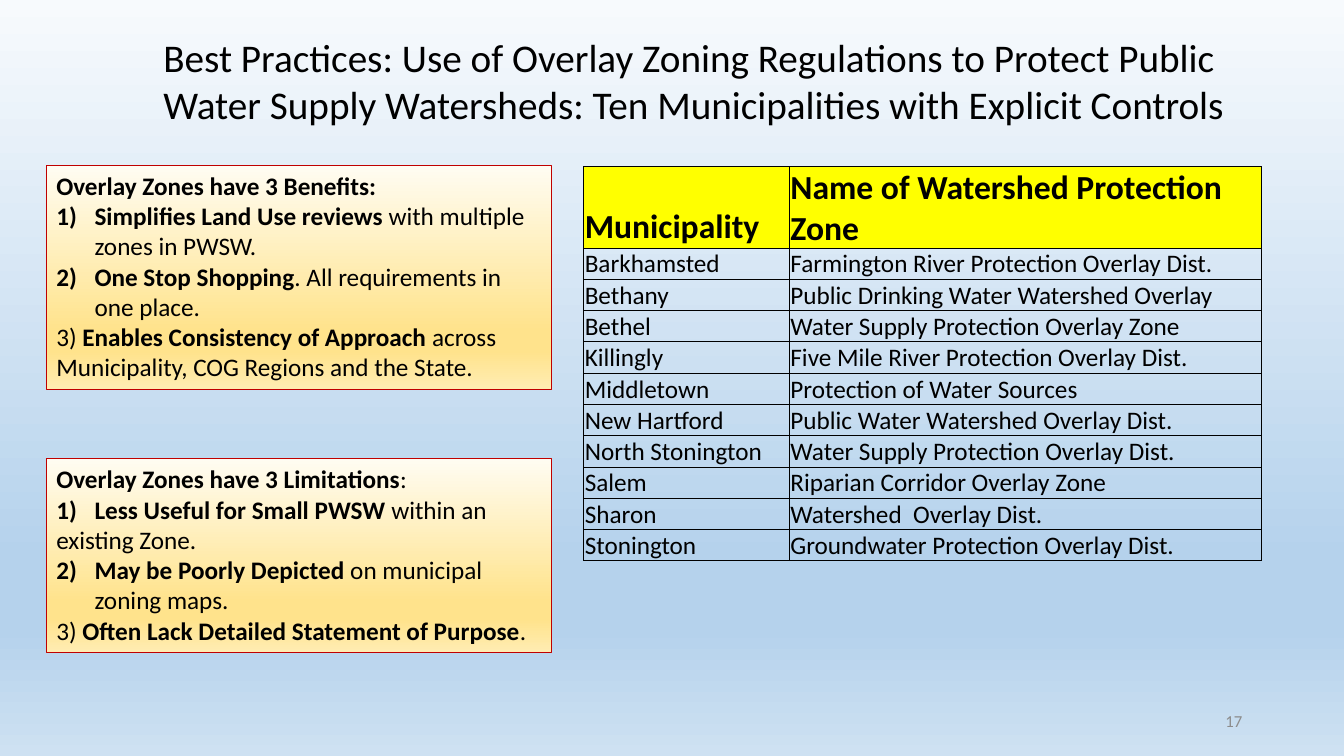
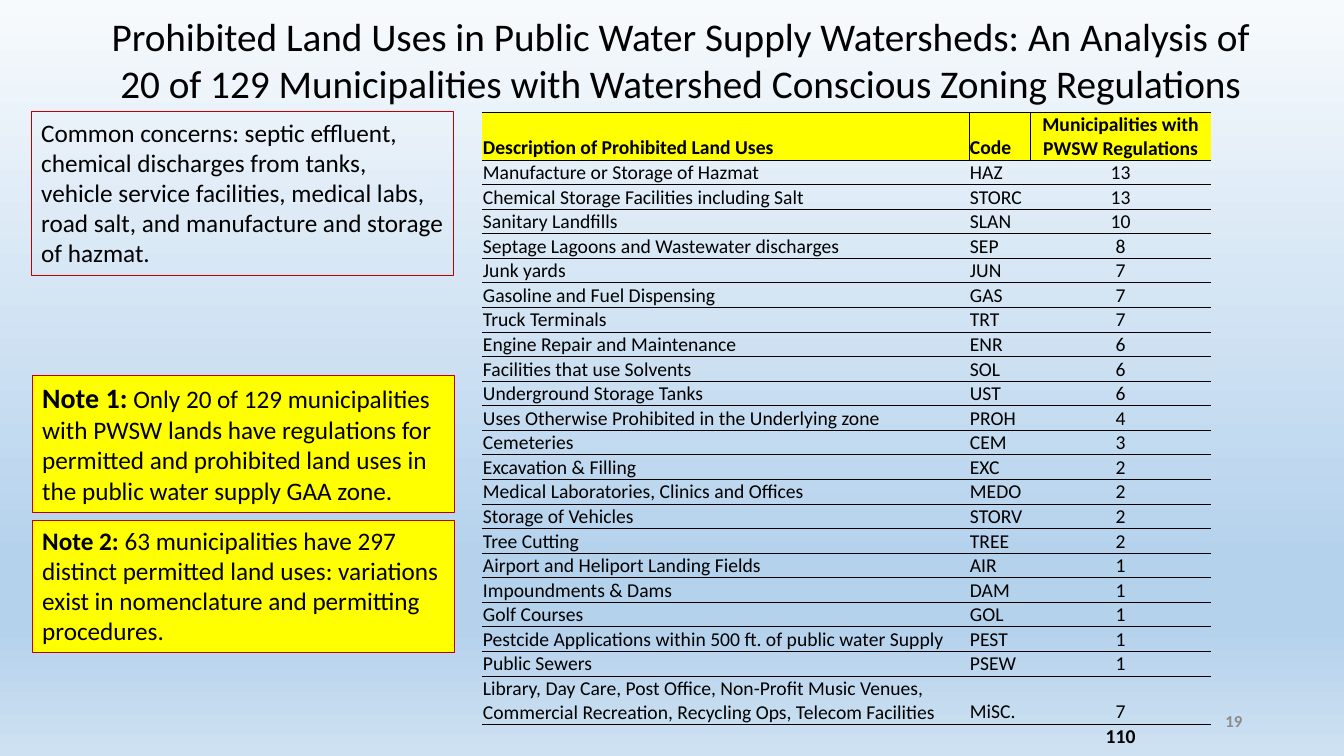
from lxml import etree
from pptx import Presentation
from pptx import util as u
from pptx.dml.color import RGBColor
from pptx.enum import shapes, text
from pptx.oxml.ns import qn

FONT = "Calibri"
BLACK, GREY, RED, YELLOW = "000000", "8C8C8C", "C00000", "FFFF00"
SKY = [(0, "F7FAFD"), (74, "B5D2EC"), (83, "B5D2EC"), (100, "CEE1F2")]
SAND = [(0, "FFFCF2"), (74, "FFE38C"), (83, "FFE38C"), (100, "FFECB2")]
LEFT, CENTER, RIGHT = text.PP_ALIGN.LEFT, text.PP_ALIGN.CENTER, text.PP_ALIGN.RIGHT


def rgb(value):
    return RGBColor.from_string(value)


def add_color(parent, value):
    etree.SubElement(parent, qn("a:srgbClr")).set("val", value)


def set_gradient(fill, element, stops):
    """Fill top to bottom with (percent, colour) stops."""
    fill.gradient()
    fill.gradient_angle = 270
    stop_list = next(element.iter(qn("a:gsLst")))
    for old in list(stop_list):
        stop_list.remove(old)
    for percent, value in stops:
        stop = etree.SubElement(stop_list, qn("a:gs"))
        stop.set("pos", str(percent * 1000))
        add_color(stop, value)


def set_borders(cell, sides):
    """Draw the named sides of a cell and switch the others off."""
    tc_pr = cell._tc.get_or_add_tcPr()
    for i, side in enumerate("LRTB"):
        ln = etree.Element(qn("a:ln" + side))
        ln.set("w", str(u.Pt(0.5)))
        if side in sides:
            add_color(etree.SubElement(ln, qn("a:solidFill")), BLACK)
        else:
            etree.SubElement(ln, qn("a:noFill"))
        tc_pr.insert(i, ln)


def set_number(p, start):
    """Number a paragraph as start) with a hanging indent."""
    p_pr = p._p.get_or_add_pPr()
    p_pr.set("marL", str(u.Inches(0.38)))
    p_pr.set("indent", str(-u.Inches(0.38)))
    number = etree.SubElement(p_pr, qn("a:buAutoNum"))
    number.set("type", "arabicParenR")
    number.set("startAt", str(start))


class Deck:
    def __init__(self):
        self.prs = Presentation()
        self.prs.slide_width = u.Inches(13.33)
        self.prs.slide_height = u.Inches(7.5)
        master = self.prs.slide_master
        set_gradient(master.background.fill, master.element, SKY)
        self.s = None

    def font(self, r, size, bold=False, color=BLACK):
        r.font.name, r.font.size, r.font.bold = FONT, u.Pt(size), bold
        r.font.color.rgb = rgb(color)

    def plain(self, p, words, size, bold=False, color=BLACK, align=LEFT):
        p.text = words
        p.alignment = align
        for r in p.runs:
            self.font(r, size, bold, color)

    def slide(self, title, x, y, w, number, align=LEFT, bold_number=False):
        self.s = self.prs.slides.add_slide(self.prs.slide_layouts[5])
        sp = self.s.shapes.title
        sp.left, sp.top, sp.width, sp.height = map(u.Inches, (x, y, w, 1.04))
        tf = sp.text_frame
        tf.word_wrap = True
        tf.vertical_anchor = text.MSO_ANCHOR.TOP
        tf.auto_size = text.MSO_AUTO_SIZE.NONE
        self.plain(tf.paragraphs[0], title, 28, align=align)
        # Slide number
        sp = self.s.shapes.add_textbox(*map(u.Inches, (9.42, 6.95, 3, 0.4)))
        tf = sp.text_frame
        tf.word_wrap = True
        tf.vertical_anchor = text.MSO_ANCHOR.MIDDLE
        self.plain(tf.paragraphs[0], number, 12, bold_number, GREY, RIGHT)

    def box(self, x, y, w, h, paragraphs, fill=None, bold_size=18):
        """Paragraphs are (number or None, words); *words* are bold."""
        sp = self.s.shapes.add_shape(
            shapes.MSO_SHAPE.RECTANGLE, *map(u.Inches, (x, y, w, h)))
        sp.shadow.inherit = False
        sp.line.color.rgb = rgb(RED)
        sp.line.width = u.Pt(0.75)
        if fill is None:
            sp.fill.background()
        elif isinstance(fill, list):
            set_gradient(sp.fill, sp.element, fill)
        else:
            sp.fill.solid()
            sp.fill.fore_color.rgb = rgb(fill)
        tf = sp.text_frame
        tf.word_wrap = True
        tf.auto_size = text.MSO_AUTO_SIZE.SHAPE_TO_FIT_TEXT
        tf.vertical_anchor = text.MSO_ANCHOR.TOP
        for i, (number, words) in enumerate(paragraphs):
            p = tf.add_paragraph() if i else tf.paragraphs[0]
            p.alignment = LEFT
            if number:
                set_number(p, number)
            for j, part in enumerate(words.split("*")):
                if part:
                    r = p.add_run()
                    r.text = part
                    bold = j % 2 == 1
                    self.font(r, bold_size if bold else 18, bold)

    def table(self, x, y, widths, heights, rows, sizes, sides, aligns, total=False):
        """sizes are (header, body); sides(row, column) names the cell borders."""
        frame = self.s.shapes.add_table(
            len(rows), len(widths),
            *map(u.Inches, (x, y, sum(widths), heights[0] + heights[1] * (len(rows) - 1))))
        table = frame.table
        table.first_row = table.horz_banding = False
        for column, width in zip(table.columns, widths):
            column.width = u.Inches(width)
        for i, row in enumerate(rows):
            header = i == 0
            bold = header or (total and i == len(rows) - 1)
            size = sizes[0] if header else sizes[1]
            table.rows[i].height = u.Inches(heights[0] if header else heights[1])
            for j, words in enumerate(row):
                cell = table.cell(i, j)
                cell.margin_left = cell.margin_right = cell.margin_top = u.Inches(0.01)
                cell.margin_bottom = 0
                cell.vertical_anchor = text.MSO_ANCHOR.BOTTOM
                if header:
                    cell.fill.solid()
                    cell.fill.fore_color.rgb = rgb(YELLOW)
                else:
                    cell.fill.background()
                set_borders(cell, sides(i, j))
                p = cell.text_frame.paragraphs[0]
                self.plain(p, words, size, bold, align=aligns[j])
                if not words:  # an empty cell must not stretch its row
                    etree.SubElement(p._p, qn("a:endParaRPr")).set("sz", str(size * 100))


ZONES = [
    ("Municipality", "Name of Watershed Protection Zone"),
    ("Barkhamsted", "Farmington River Protection Overlay Dist."),
    ("Bethany", "Public Drinking Water Watershed Overlay"),
    ("Bethel", "Water Supply Protection Overlay Zone"),
    ("Killingly", "Five Mile River Protection Overlay Dist."),
    ("Middletown", "Protection of Water Sources"),
    ("New Hartford", "Public Water Watershed Overlay Dist."),
    ("North Stonington", "Water Supply Protection Overlay Dist."),
    ("Salem", "Riparian Corridor Overlay Zone"),
    ("Sharon", "Watershed  Overlay Dist."),
    ("Stonington", "Groundwater Protection Overlay Dist."),
]
LAND_USES = [
    ("Description of Prohibited Land Uses", "Code", "Municipalities with PWSW Regulations"),
    ("Manufacture or Storage of Hazmat", "HAZ", "13"),
    ("Chemical Storage Facilities including Salt", "STORC", "13"),
    ("Sanitary Landfills", "SLAN", "10"),
    ("Septage Lagoons and Wastewater discharges", "SEP", "8"),
    ("Junk yards", "JUN", "7"),
    ("Gasoline and Fuel Dispensing", "GAS", "7"),
    ("Truck Terminals", "TRT", "7"),
    ("Engine Repair and Maintenance", "ENR", "6"),
    ("Facilities that use Solvents", "SOL", "6"),
    ("Underground Storage Tanks", "UST", "6"),
    ("Uses Otherwise Prohibited in the Underlying zone", "PROH", "4"),
    ("Cemeteries", "CEM", "3"),
    ("Excavation & Filling", "EXC", "2"),
    ("Medical Laboratories, Clinics and Offices", "MEDO", "2"),
    ("Storage of Vehicles", "STORV", "2"),
    ("Tree Cutting", "TREE", "2"),
    ("Airport and Heliport Landing Fields", "AIR", "1"),
    ("Impoundments & Dams", "DAM", "1"),
    ("Golf Courses", "GOL", "1"),
    ("Pestcide Applications within 500 ft. of public water Supply", "PEST", "1"),
    ("Public Sewers", "PSEW", "1"),
    ("Library, Day Care, Post Office, Non-Profit Music Venues, Commercial Recreation, "
     "Recycling Ops, Telecom Facilities", "MiSC.", "7"),
    ("", "", "110"),
]


def land_use_sides(i, j):
    if i == 0:
        return ("RTB", "LRTB", "LTB")[j]
    return "T" if i == len(LAND_USES) - 1 else "TB"


def main():
    deck = Deck()

    # Overlay zoning
    deck.slide("Best Practices: Use of Overlay Zoning Regulations to Protect Public Water "
               "Supply Watersheds: Ten Municipalities with Explicit Controls",
               1.52, 0.28, 10.99, "17")
    deck.table(5.79, 1.65, (2.04, 4.68), (0.81, 0.31), ZONES, (24, 18),
               lambda i, j: "LRTB", (LEFT, LEFT))
    deck.box(0.46, 1.64, 5.01, 2.22, [
        (None, "*Overlay Zones have 3 Benefits:*"),
        (1, "*Simplifies Land Use reviews *with multiple zones in PWSW."),
        (2, "*One Stop Shopping*. All requirements in one place."),
        (None, "3) *Enables Consistency of Approach *across"),
        (None, "Municipality, COG Regions and the State."),
    ], SAND)
    deck.box(0.46, 4.55, 5.01, 1.92, [
        (None, "*Overlay Zones have 3 Limitations*:"),
        (1, "*Less Useful for Small PWSW *within an"),
        (None, "existing Zone."),
        (2, "*May be Poorly Depicted* on municipal zoning maps."),
        (None, "3) *Often Lack Detailed Statement of Purpose*."),
    ], SAND)

    # Prohibited land uses
    deck.slide("Prohibited Land Uses in Public Water Supply Watersheds: An Analysis of 20 of "
               "129 Municipalities with Watershed Conscious Zoning Regulations",
               0.91, 0.07, 11.68, "19", CENTER, True)
    deck.table(4.78, 1.11, (4.83, 0.61, 1.79), (0.33, 0.19), LAND_USES, (14, 14),
               land_use_sides, (LEFT, LEFT, CENTER), total=True)
    deck.box(0.31, 1.11, 4.19, 1.62, [
        (None, "Common concerns: septic effluent, chemical discharges from tanks, vehicle "
               "service facilities, medical labs, road salt, and manufacture and storage "
               "of hazmat."),
    ])
    deck.box(0.32, 3.73, 4.19, 1.35, [
        (None, "*Note 1:* Only 20 of 129 municipalities"),
        (None, "with PWSW lands have regulations for permitted and prohibited land uses in"),
        (None, "the public water supply GAA zone."),
    ], YELLOW, bold_size=20)
    deck.box(0.32, 5.16, 4.19, 1.31, [
        (None, "*Note 2: *63 municipalities have 297 distinct permitted land uses: variations "
               "exist in nomenclature and permitting procedures."),
    ], YELLOW)

    deck.prs.save("out.pptx")


if __name__ == "__main__":
    main()
